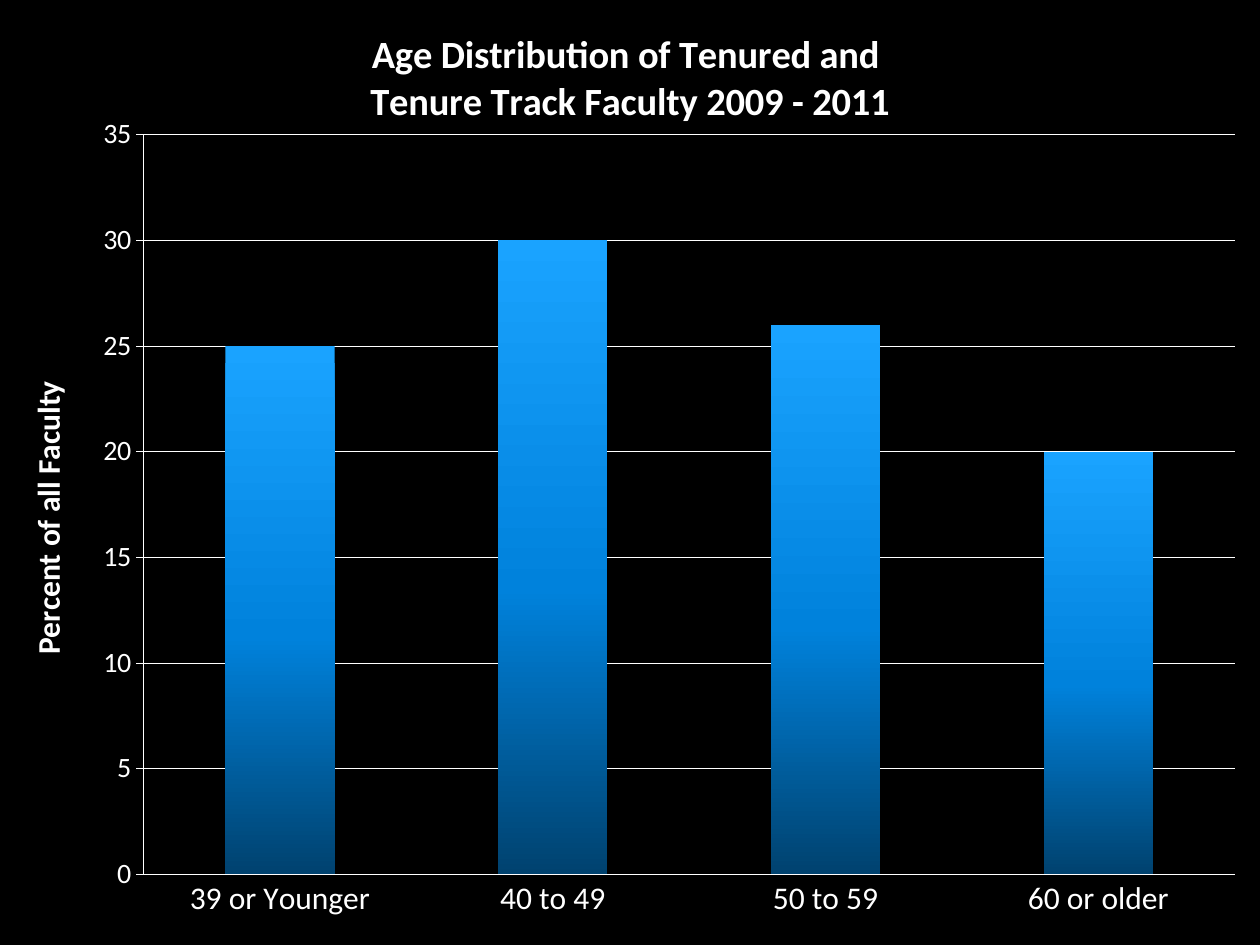
import pptx
import pptx.chart.data
import pptx.dml.color
import pptx.enum.chart
import pptx.oxml
import pptx.oxml.ns
import pptx.util

qn = pptx.oxml.ns.qn


def color(hex_string):
    return pptx.dml.color.RGBColor.from_string(hex_string)


def style_font(font, name="Calibri", size=18, bold=False, fill="FFFFFF"):
    font.name = name
    font.size = pptx.util.Pt(size)
    font.bold = bold
    font.color.rgb = color(fill)


def write_text(frame, text, **text_format):
    for index, line in enumerate(text.split("\n")):
        para = frame.add_paragraph() if index else frame.paragraphs[0]
        span = para.add_run()
        span.text = line
        style_font(span.font, **text_format)


def fill_gradient(series, stops):
    series.format.fill.gradient()
    series.format.fill.gradient_angle = 270
    stop_list = series.format.fill._fill._gradFill.find(qn("a:gsLst"))
    for stop in list(stop_list):
        stop_list.remove(stop)
    for share, value in stops:
        stop_list.append(pptx.oxml.parse_xml(
            f'<a:gs {pptx.oxml.ns.nsdecls("a")} pos="{share * 1000}">'
            f'<a:srgbClr val="{value}"/></a:gs>'))


class SlideBuilder:
    ink = "FFFFFF"
    background = "000000"
    bar_stops = [(0, "1AA3FF"), (55, "0082DC"), (100, "00426F")]

    def __init__(self, width, height):
        self.width, self.height = width, height
        self.deck = pptx.Presentation()
        self.deck.slide_width = pptx.util.Inches(width)
        self.deck.slide_height = pptx.util.Inches(height)
        self.page = self.deck.slides.add_slide(self.deck.slide_layouts[6])
        fill = self.page.background.fill
        fill.solid()
        fill.fore_color.rgb = color(self.background)

    def place(self, element, **inches):
        layout = element.find(qn("c:layout"))
        if layout is not None:
            element.remove(layout)
        sizes = {"x": self.width, "w": self.width, "y": self.height, "h": self.height}
        modes = "".join(f'<c:{side}Mode val="edge"/>' for side in "xy")
        values = "".join(f'<c:{key} val="{length / sizes[key]:.5f}"/>'
                         for key, length in inches.items())
        target = '<c:layoutTarget val="inner"/>' if "w" in inches else ""
        layout = pptx.oxml.parse_xml(
            f'<c:layout {pptx.oxml.ns.nsdecls("c")}><c:manualLayout>'
            f"{target}{modes}{values}</c:manualLayout></c:layout>")
        text = element.find(qn("c:tx"))
        element.insert(0 if text is None else 1, layout)

    def line(self, line_format):
        line_format.color.rgb = color(self.ink)
        line_format.width = pptx.util.Pt(0.5)

    def title(self, title, text, size, x, y):
        write_text(title.text_frame, text, size=size, bold=True, fill=self.ink)
        self.place(title._element, x=x, y=y)

    def column_chart(self, categories, name, values, left=0, top=0, width=1, height=1):
        data = pptx.chart.data.CategoryChartData()
        data.categories = categories
        data.add_series(name, values)
        wide, high = self.deck.slide_width, self.deck.slide_height
        chart = self.page.shapes.add_chart(
            pptx.enum.chart.XL_CHART_TYPE.COLUMN_CLUSTERED,
            int(left * wide), int(top * high),
            int(width * wide), int(height * high), data).chart
        style_font(chart.font, fill=self.ink)
        chart.has_legend = False
        plot = chart.plots[0]
        plot.gap_width = 150
        plot.vary_by_categories = False
        fill_gradient(plot.series[0], self.bar_stops)
        return chart

    def axis(self, axis, size, tick):
        style_font(axis.tick_labels.font, size=size, fill=self.ink)
        axis.major_tick_mark = tick
        axis.minor_tick_mark = pptx.enum.chart.XL_TICK_MARK.NONE
        self.line(axis.format.line)

    def value_scale(self, axis, maximum, step):
        axis.minimum_scale = 0
        axis.maximum_scale = maximum
        axis.major_unit = step
        axis.tick_labels.number_format = "#,##0"
        axis.tick_labels.number_format_is_linked = False
        axis.has_major_gridlines = True
        self.line(axis.major_gridlines.format.line)


def main():
    builder = SlideBuilder(10, 7.5)
    chart = builder.column_chart(
        ["39 or Younger", "40 to 49", "50 to 59", "60 or older"],
        "Series 1", [25, 30, 26, 20])
    ticks = pptx.enum.chart.XL_TICK_MARK
    builder.axis(chart.category_axis, 18, ticks.NONE)
    builder.axis(chart.value_axis, 16, ticks.OUTSIDE)
    builder.value_scale(chart.value_axis, 35, 5)
    builder.title(chart.chart_title,
                  "Age Distribution of Tenured and \nTenure Track Faculty 2009 - 2011",
                  22, 2.91, 0.2)
    builder.title(chart.value_axis.axis_title, "Percent of all Faculty", 18, 0.16, 2.98)
    builder.place(chart._chartSpace.chart.plotArea, x=1.14, y=1.07, w=8.66, h=5.87)
    builder.deck.save("out.pptx")


if __name__ == "__main__":
    main()
